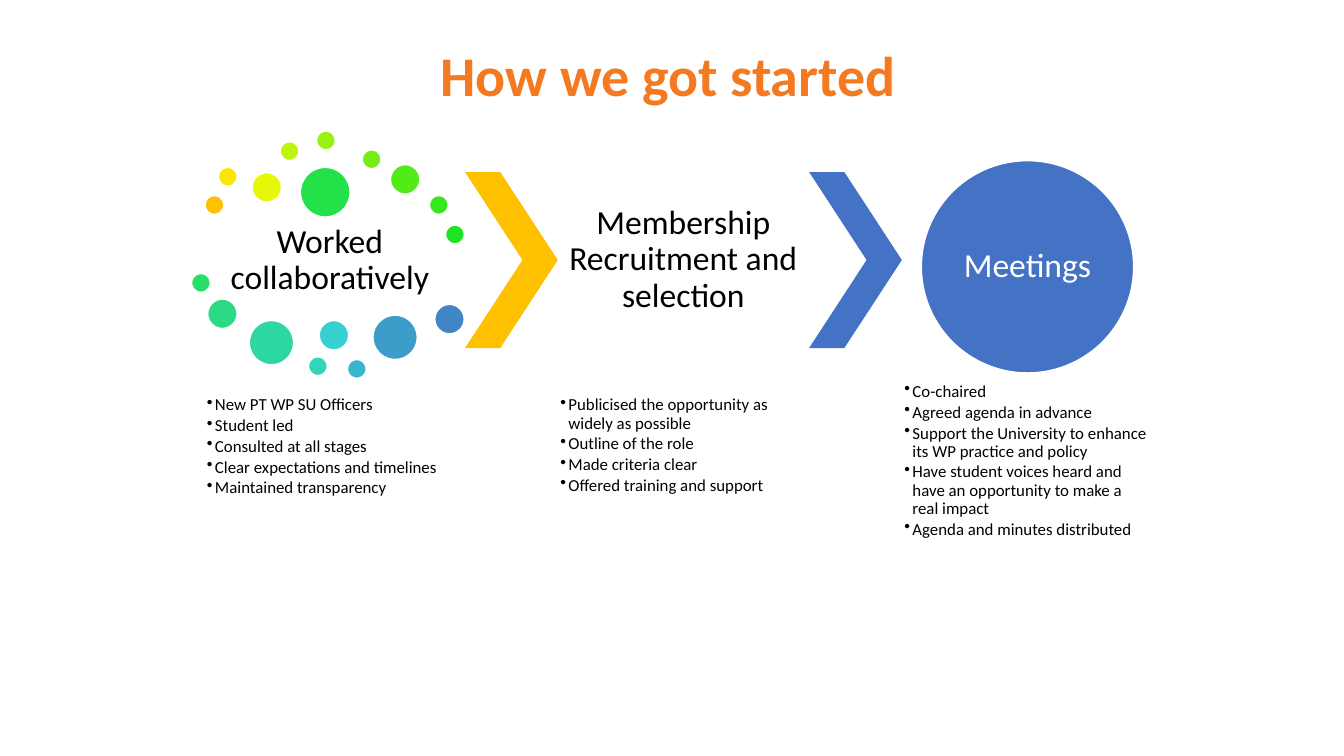
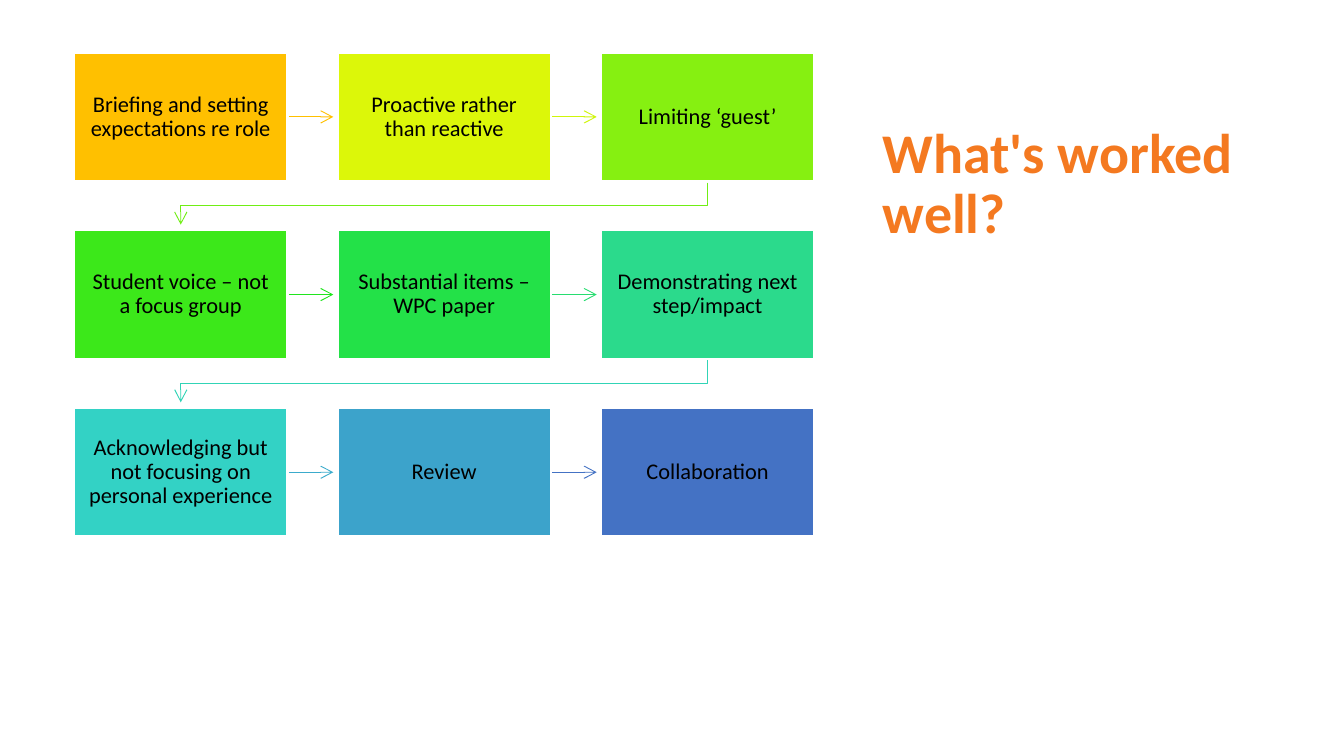
"""Build two slides on starting a student panel and what worked well."""
from typing import NamedTuple

from lxml import etree
from pptx import Presentation
from pptx.dml.color import RGBColor
from pptx.enum.shapes import MSO_CONNECTOR, MSO_SHAPE
from pptx.enum.text import MSO_ANCHOR, PP_ALIGN
from pptx.oxml.ns import qn
from pptx.shapes.autoshape import Shape
from pptx.shapes.base import BaseShape
from pptx.slide import Slide
from pptx.text.text import TextFrame
from pptx.util import Inches, Pt

OVAL, RECT, CHEVRON = MSO_SHAPE.OVAL, MSO_SHAPE.RECTANGLE, MSO_SHAPE.CHEVRON
STRAIGHT = MSO_CONNECTOR.STRAIGHT
TOP, MIDDLE = MSO_ANCHOR.TOP, MSO_ANCHOR.MIDDLE
LEFT, CENTER = PP_ALIGN.LEFT, PP_ALIGN.CENTER

WIDTH, HEIGHT = Inches(10), Inches(5.625)
UNIT = WIDTH / 100
FONT = "Calibri"
BLACK, WHITE, ORANGE, GOLD, BLUE = "000000", "FFFFFF", "F47920", "FFC000", "4472C4"


class Box(NamedTuple):
    """Place and size, in hundredths of the slide width."""
    x: float
    y: float
    w: float
    h: float


class Style(NamedTuple):
    """Look of a text; the inset is in grid units."""
    size: float
    color: str = BLACK
    bold: bool = False
    align: PP_ALIGN = CENTER
    anchor: MSO_ANCHOR = MIDDLE
    inset: float = 0.3
    spacing: float = 0.9
    after: float = 0
    bullet: bool = False


class Dot(NamedTuple):
    """Small round mark."""
    x: float
    y: float
    size: float
    color: str


class Step(NamedTuple):
    """Box of the flow and the colour of the arrow that leaves it."""
    text: str
    color: str
    arrow: str = ""


class Grid(NamedTuple):
    """Even layout of equal cells."""
    x: float
    y: float
    dx: float
    dy: float
    w: float
    h: float

    def cell(self, col: int, row: int) -> Box:
        """Return the box at a column and row."""
        return Box(self.x + col * self.dx, self.y + row * self.dy, self.w, self.h)


HEAD = Style(18)
WHITE_HEAD = Style(18, WHITE, inset=0)
LABEL = Style(12, inset=0.9)
LIST = Style(9, align=LEFT, anchor=TOP, inset=0.2, after=1.35, bullet=True)
TITLE = Style(30, ORANGE, True, LEFT, TOP, 1, 1)
FLOW = Grid(5.5, 3.9, 19.6, 13.22, 15.9, 9.6)

DOTS = [
    Dot(15.2, 14.5, 1.5, GOLD), Dot(16.2, 12.4, 1.5, "FCE604"),
    Dot(18.7, 12.8, 2.3, "E6F808"), Dot(20.8, 10.5, 1.5, "BEF50C"),
    Dot(23.5, 9.7, 1.5, "98F20F"), Dot(26.9, 11.1, 1.5, "75EE13"),
    Dot(29, 12.2, 2.3, "53EB17"), Dot(31.9, 14.5, 1.5, "34E81B"),
    Dot(33.1, 16.7, 1.5, "1FE426"), Dot(22.3, 12.4, 3.8, "23E148"),
    Dot(14.2, 20.3, 1.5, "26DE68"), Dot(15.4, 22.2, 2.3, "2ADA85"),
    Dot(18.5, 23.8, 3.4, "2ED7A1"), Dot(22.9, 26.5, 1.5, "32D4BA"),
    Dot(23.7, 23.8, 2.3, "35D1D1"), Dot(25.8, 26.7, 1.5, "39B6CE"),
    Dot(27.7, 23.4, 3.4, "3D9DCA"), Dot(32.3, 22.6, 2.3, "4086C7"),
]

LISTS = [
    (Box(15.2, 29.3, 18.7, 11.6), [
        "New PT WP SU Officers", "Student led", "Consulted at all stages",
        "Clear expectations and timelines", "Maintained transparency"]),
    (Box(41.5, 29.3, 18.7, 11.6), [
        "Publicised the opportunity as widely as possible", "Outline of the role",
        "Made criteria clear", "Offered training and support"]),
    (Box(67.1, 28.3, 18.7, 13.7), [
        "Co-chaired", "Agreed agenda in advance",
        "Support the University to enhance its WP practice and policy",
        "Have student voices heard and have an opportunity to make a real impact",
        "Agenda and minutes distributed"]),
]

STEPS = [
    Step("Briefing and setting expectations re role", GOLD, GOLD),
    Step("Proactive rather than reactive", "DCF709", "CFF60A"),
    Step("Limiting ‘guest’", "86F011", "70EE14"),
    Step("Student voice – not a focus group", "3CE81A", "20E51E"),
    Step("Substantial items – WPC paper", "23E148", "27DD70"),
    Step("Demonstrating next step/impact", "2BDA8C", "31D4B6"),
    Step("Acknowledging but not focusing on personal experience", "33D2C5", "3BABCC"),
    Step("Review", "3CA3CB", BLUE),
    Step("Collaboration", BLUE),
]


def emu(*units: float) -> list[int]:
    """Turn grid units into slide lengths."""
    return [round(unit * UNIT) for unit in units]


def rgb(color: str) -> RGBColor:
    """Turn a hex string into a colour."""
    return RGBColor.from_string(color)


def write(frame: TextFrame, lines: list[str], style: Style, wrap: bool = True) -> None:
    """Fill a text frame with styled lines."""
    frame.word_wrap = wrap
    frame.vertical_anchor = style.anchor
    inset = emu(style.inset)[0]
    frame.margin_left = frame.margin_right = inset
    frame.margin_top = frame.margin_bottom = inset // 2 if style is TITLE else inset
    for num, line in enumerate(lines):
        para = frame.add_paragraph() if num else frame.paragraphs[0]
        para.text = line
        para.alignment = style.align
        para.line_spacing = style.spacing
        para.space_after = Pt(style.after)
        if style.bullet:
            props = para._p.get_or_add_pPr()
            hang = emu(0.6)[0]
            props.set("marL", str(hang))
            props.set("indent", str(-hang))
            etree.SubElement(props, qn("a:buChar"), char="•")
        font = para.font
        font.name, font.size, font.bold = FONT, Pt(style.size), style.bold
        font.color.rgb = rgb(style.color)


def note(slide: Slide, box: Box, lines: list[str], style: Style, wrap: bool = True) -> None:
    """Add a text box."""
    write(slide.shapes.add_textbox(*emu(*box)).text_frame, lines, style, wrap)


def block(slide: Slide, kind: MSO_SHAPE, box: Box, color: str, edge: bool = True) -> Shape:
    """Add a filled shape, with a white edge if asked."""
    shape = slide.shapes.add_shape(kind, *emu(*box))
    shape.shadow.inherit = False
    shape.fill.solid()
    shape.fill.fore_color.rgb = rgb(color)
    if edge:
        shape.line.color.rgb = rgb(WHITE)
        shape.line.width = Pt(1.5)
    else:
        shape.line.fill.background()
    return shape


def point(shape: BaseShape, color: str) -> None:
    """Give a line its colour and an open arrowhead."""
    shape.line.color.rgb = rgb(color)
    shape.line.width = Pt(0.5)
    props = shape.element.spPr
    etree.SubElement(props.find(qn("a:ln")), qn("a:tailEnd"), type="arrow")
    if props.find(qn("a:effectLst")) is None:
        etree.SubElement(props, qn("a:effectLst"))


def across(slide: Slide, box: Box, color: str) -> None:
    """Draw an arrow to the next column."""
    x, y = box.x + box.w, box.y + box.h / 2
    point(slide.shapes.add_connector(STRAIGHT, *emu(x + 0.1, y, x + 3.4, y)), color)


def down(slide: Slide, box: Box, end: Box, color: str) -> None:
    """Draw a bent arrow to the start of the next row."""
    x, y, far = box.x + box.w / 2, box.y + box.h, end.x + end.w / 2
    path = slide.shapes.build_freeform(*emu(x, y + 0.1))
    bend = y + 1.8
    path.add_line_segments(
        [emu(x, bend), emu(far, bend), emu(far, end.y - 0.4)], close=False)
    shape = path.convert_to_shape()
    shape.fill.background()
    shape.shadow.inherit = False
    point(shape, color)


def start(slide: Slide) -> None:
    """Draw the three stages of getting started."""
    note(slide, Box(31.8, 2.5, 36.4, 6.1), ["How we got started"], TITLE, False)
    for dot in DOTS:
        block(slide, OVAL, Box(dot.x, dot.y, dot.size, dot.size), dot.color)
    note(slide, Box(15.2, 16.3, 18.7, 6.2), ["Worked collaboratively"], HEAD)
    note(slide, Box(41.5, 12.8, 18.7, 13.1),
         ["Membership Recruitment and selection"], HEAD)
    for x, color in ((34.6, GOLD), (60.2, BLUE)):
        mark = block(slide, CHEVRON, Box(x, 12.8, 6.9, 13.1), color, False)
        mark.adjustments[0] = 0.62
    disc = block(slide, OVAL, Box(68.5, 11.9, 15.9, 15.9), BLUE)
    write(disc.text_frame, ["Meetings"], WHITE_HEAD)
    for box, lines in LISTS:
        note(slide, box, lines, LIST)


def worked(slide: Slide) -> None:
    """Draw the flow of what worked well."""
    note(slide, Box(64.7, 8.3, 32.4, 27.4), ["What's worked well?"],
         TITLE._replace(spacing=0.9))
    for num, step in enumerate(STEPS):
        row, col = divmod(num, 3)
        box = FLOW.cell(col, row)
        write(block(slide, RECT, box, step.color).text_frame, [step.text], LABEL)
        if step.arrow and col < 2:
            across(slide, box, step.arrow)
        elif step.arrow:
            down(slide, box, FLOW.cell(0, row + 1), step.arrow)


def main() -> None:
    """Build and save the deck."""
    deck = Presentation()
    deck.slide_width, deck.slide_height = WIDTH, HEIGHT
    for draw in (start, worked):
        draw(deck.slides.add_slide(deck.slide_layouts[6]))
    deck.save("out.pptx")


if __name__ == "__main__":
    main()
